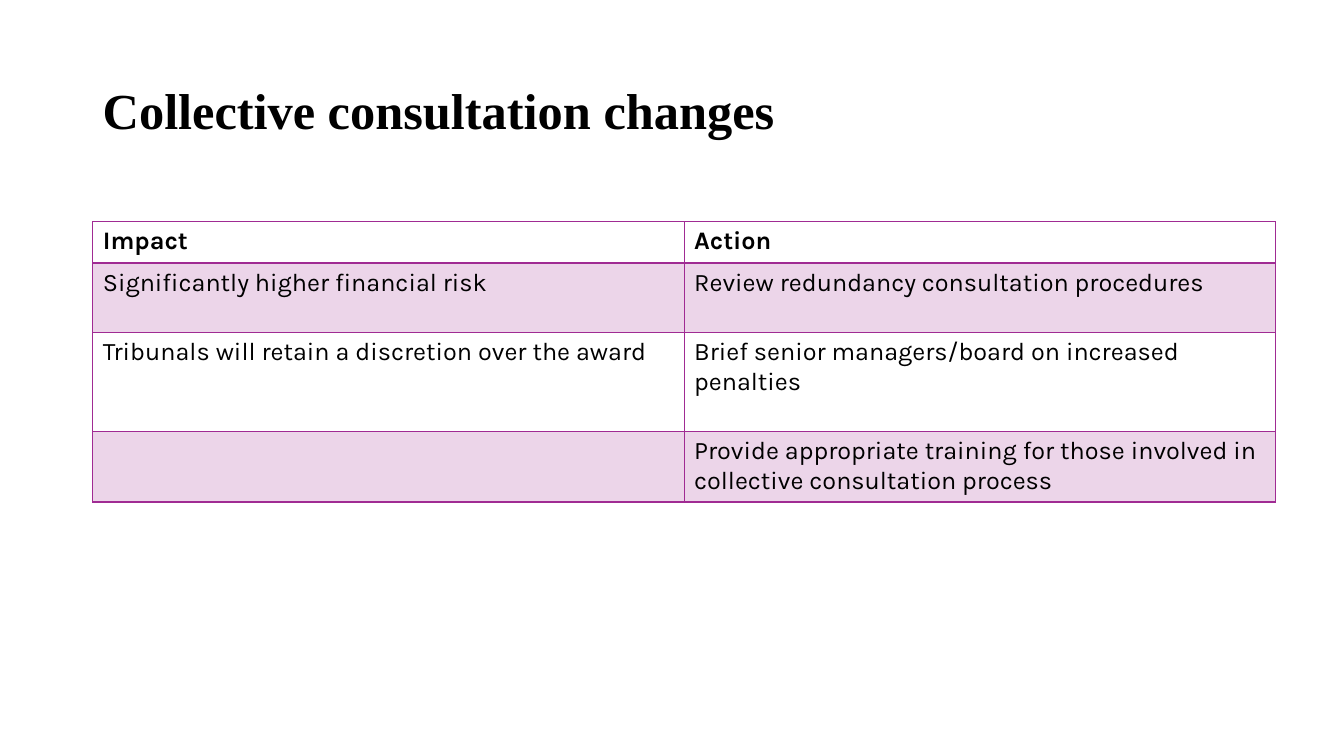
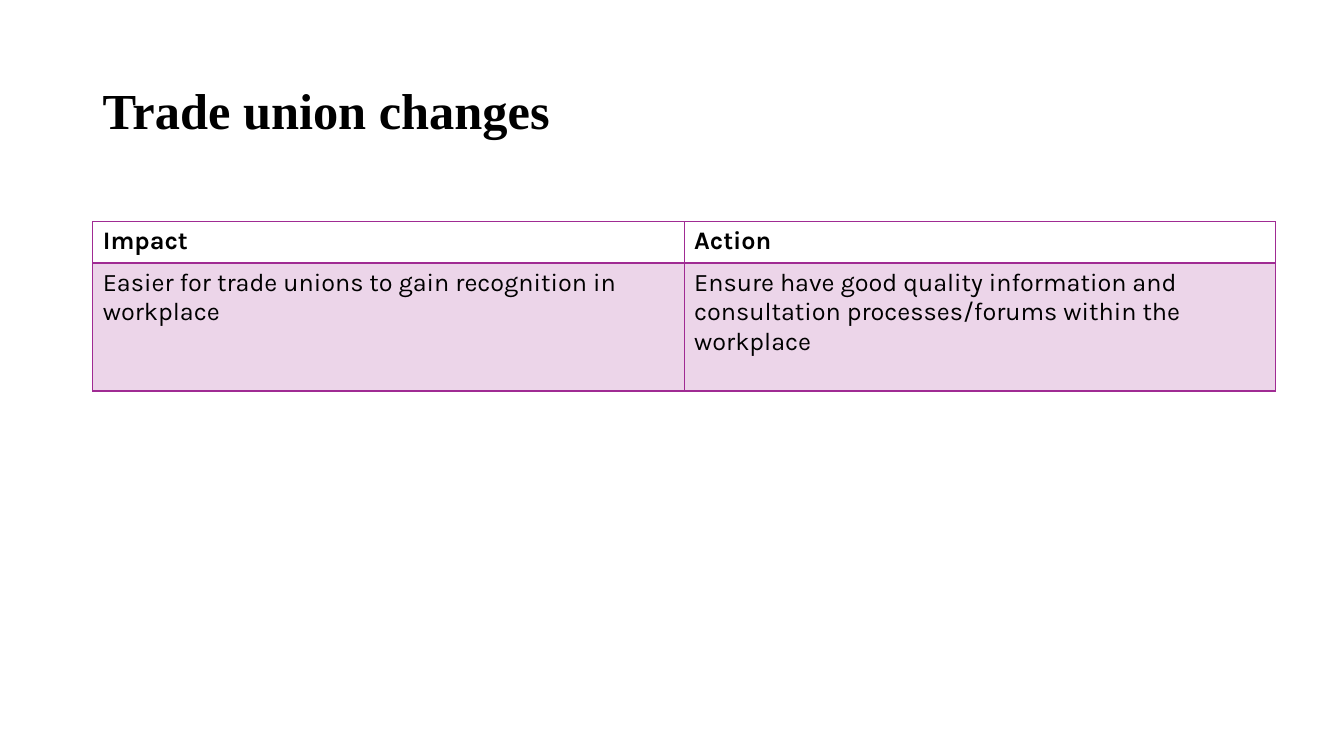
from dataclasses import dataclass

from lxml import etree
from pptx import Presentation
from pptx.dml.color import RGBColor
from pptx.enum import text
from pptx.oxml import ns
from pptx.util import Inches, Pt


@dataclass(frozen=True)
class Theme:
    ink: str = "000000"
    paper: str = "FFFFFF"
    band: str = "ECD5E9"
    border: str = "A02B93"
    title_font: str = "Times New Roman"
    body_font: str = "Karla"
    title_size: int = 36
    body_size: int = 18
    thin: int = 1
    thick: int = 2


THEME = Theme()
LEFT, WIDTH = 0.92, 11.73
TITLE_TOP, TITLE_HEIGHT = 0.4, 1.45
TABLE_TOP, HEADER_HEIGHT = 2.2, 0.41
HEADERS = ("Impact", "Action")

# Each slide: title, then rows of (height, impact, action)
SLIDES = [
    ("Collective consultation changes", [
        (0.69, "Significantly higher financial risk",
         "Review redundancy consultation procedures"),
        (0.98, "Tribunals will retain a discretion over the award",
         "Brief senior managers/board on increased penalties"),
        (0.68, "",
         "Provide appropriate training for those involved in "
         "collective consultation process"),
    ]),
    ("Trade union changes", [
        (1.27, "Easier for trade unions to gain recognition in workplace",
         "Ensure have good quality information and consultation "
         "processes/forums within the workplace"),
    ]),
]


def style_font(paragraph, name, size, bold):
    font = paragraph.font
    font.name, font.size, font.bold = name, Pt(size), bold
    font.color.rgb = RGBColor.from_string(THEME.ink)


def add_title(slide, title):
    box = slide.shapes.add_textbox(Inches(LEFT), Inches(TITLE_TOP),
                                   Inches(WIDTH), Inches(TITLE_HEIGHT))
    frame = box.text_frame
    frame.word_wrap = True
    frame.vertical_anchor = text.MSO_ANCHOR.MIDDLE
    paragraph = frame.paragraphs[0]
    paragraph.text = title
    paragraph.line_spacing = 0.9
    style_font(paragraph, THEME.title_font, THEME.title_size, True)


def set_borders(cell, widths):
    """Draw the cell's edges; widths maps L, R, T and B to points."""
    properties = cell._tc.get_or_add_tcPr()
    for index, side in enumerate("LRTB"):
        line = etree.Element(ns.qn(f"a:ln{side}"), w=str(Pt(widths[side])))
        fill = etree.SubElement(line, ns.qn("a:solidFill"))
        etree.SubElement(fill, ns.qn("a:srgbClr"), val=THEME.border)
        properties.insert(index, line)


def fill_cell(cell, words, row):
    cell.fill.solid()
    cell.fill.fore_color.rgb = RGBColor.from_string(
        THEME.band if row % 2 else THEME.paper)
    widths = dict.fromkeys("LRTB", THEME.thin)
    if row == 0:
        widths["B"] = THEME.thick
    elif row == 1:
        widths["T"] = THEME.thick
    set_borders(cell, widths)
    paragraph = cell.text_frame.paragraphs[0]
    paragraph.text = words
    style_font(paragraph, THEME.body_font, THEME.body_size, row == 0)


def add_impact_table(slide, body):
    rows = [(HEADER_HEIGHT, *HEADERS), *body]
    height = sum(row[0] for row in rows)
    table = slide.shapes.add_table(
        len(rows), len(HEADERS), Inches(LEFT), Inches(TABLE_TOP),
        Inches(WIDTH), Inches(height)).table
    table.horz_banding = False
    for row, (row_height, *cells) in enumerate(rows):
        table.rows[row].height = Inches(row_height)
        for column, words in enumerate(cells):
            fill_cell(table.cell(row, column), words, row)


def main():
    presentation = Presentation()
    presentation.slide_width = Inches(13.33)
    presentation.slide_height = Inches(7.5)
    blank = presentation.slide_layouts[6]
    for title, body in SLIDES:
        slide = presentation.slides.add_slide(blank)
        add_title(slide, title)
        add_impact_table(slide, body)
    presentation.save("out.pptx")


if __name__ == "__main__":
    main()
